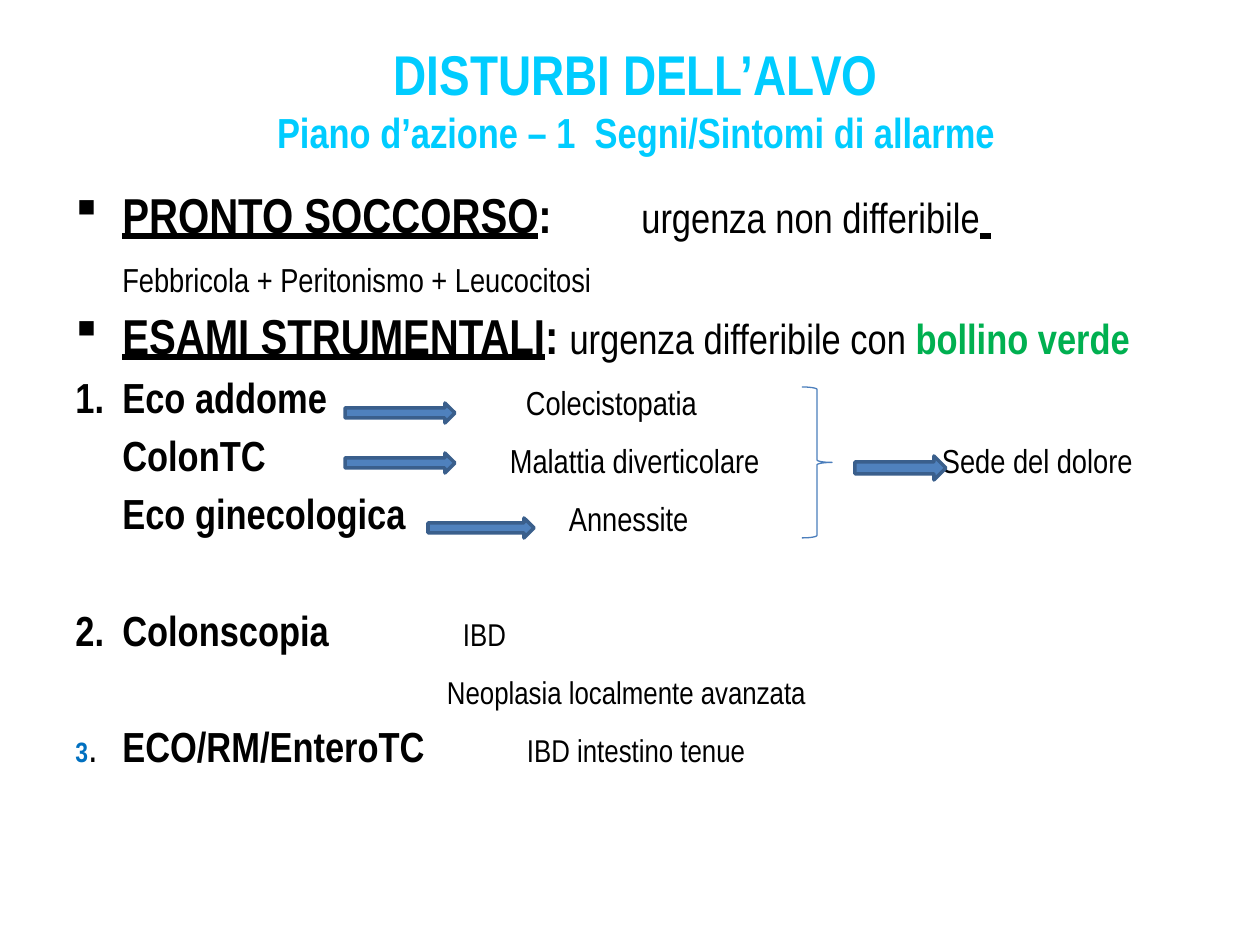
from lxml.etree import SubElement as Sub
from pptx import Presentation
from pptx.dml.color import RGBColor
from pptx.enum.shapes import MSO_SHAPE as Shape
from pptx.enum.text import MSO_ANCHOR as Anchor, PP_ALIGN as Align
from pptx.oxml.ns import qn
from pptx.util import Emu, Pt

SCALE = 914400 / 126
FACE = "Arial Narrow"
BLACK, CYAN, GREEN, BLUE = "000000", "00CCFF", "00B050", "0070C0"
FILL, EDGE, BRACE = "4F81BD", "3A5F8C", "4B7EBC"
INDENT, PITCH, LIST_TOP = 47, 58, 382
NOTES = [
    ("Colecistopatia", 526, 0, 19),
    ("Malattia diverticolare", 510, 1, 19),
    ("Sede del dolore", 942, 1, 19),
    ("Annessite", 569, 2, 19),
    ("IBD", 463, 4, 18),
    ("Neoplasia localmente avanzata", 447, 5, 18),
    ("IBD intestino tenue", 527, 6, 18),
]
ARROWS = [
    (345, 403, 110, 20),
    (345, 453, 110, 20),
    (855, 456, 91, 24),
    (428, 518, 106, 20),
]


def px(n):
    return Emu(round(n * SCALE))


def color(code):
    return RGBColor.from_string(code)


def add_box(slide, left, top, width, height, anchor):
    box = slide.shapes.add_textbox(px(left), px(top), px(width), px(height))
    frame = box.text_frame
    frame.word_wrap = True
    frame.vertical_anchor = anchor
    return frame


def add_run(para, text, size, style="", tint=BLACK):
    run = para.add_run()
    run.text = text
    run.font.size = Pt(size)
    run.font.bold = "b" in style
    run.font.underline = "u" in style
    run.font.color.rgb = color(tint)


def add_mark(props, mark):
    if isinstance(mark, int):
        Sub(props, qn("a:buAutoNum"), type="arabicPeriod", startAt=str(mark))
    elif mark:
        Sub(props, qn("a:buFont"), typeface="Wingdings")
        Sub(props, qn("a:buChar"), char=mark)
    else:
        Sub(props, qn("a:buNone"))


def add_tab(props, stop):
    tabs = Sub(props, qn("a:tabLst"))
    Sub(tabs, qn("a:tab"), pos=str(px(stop)), algn="l")


def add_row(frame, pitch, runs, mark=None, stop=None, hang=False, gap=0):
    first = frame.paragraphs[0]
    para = frame.add_paragraph() if first.runs else first
    para.line_spacing = px(pitch)
    para.space_before = px(gap)
    props = para._p.get_or_add_pPr()
    props.set("marL", str(px(INDENT)))
    props.set("indent", str(px(-INDENT if mark or hang else 0)))
    add_mark(props, mark)
    if stop:
        add_tab(props, stop)
    para.font.name = FACE
    for run in runs:
        add_run(para, *run)


def add_title(slide):
    frame = add_box(slide, 69, 1, 1134, 195, Anchor.MIDDLE)
    para = frame.paragraphs[0]
    para.alignment = Align.CENTER
    para.font.name = FACE
    add_run(para, "DISTURBI DELL’ALVO", 32, "b", CYAN)
    para.add_line_break()
    add_run(para, "Piano d’azione – 1  Segni/Sintomi di allarme", 24, "b", CYAN)


def add_plan(slide):
    frame = add_box(slide, 63, 185, 1134, 665, Anchor.TOP)
    add_row(frame, 52, [
        ("PRONTO SOCCORSO", 28, "bu"), (":\t", 28, "b"),
        ("urgenza non differibile", 24), (" ", 28, "bu"),
    ], "§", 566)
    add_row(frame, 56, [("Febbricola + Peritonismo + Leucocitosi", 19)])
    add_row(frame, 65, [
        ("ESAMI STRUMENTALI", 28, "bu"), (": ", 28, "b"),
        ("urgenza differibile con ", 24), ("bollino verde", 24, "b", GREEN),
    ], "§")
    add_row(frame, PITCH, [("Eco addome", 24, "b")], 1)
    add_row(frame, PITCH, [("ColonTC", 24, "b")])
    add_row(frame, PITCH, [("Eco ginecologica", 24, "b")])
    add_row(frame, PITCH, [("Colonscopia", 24, "b")], 2, gap=PITCH + 1)
    add_row(frame, PITCH, [
        ("3", 16, "b", BLUE), (".\t", 24), ("ECO/RM/EnteroTC", 24, "b"),
    ], hang=True, gap=PITCH)


def add_note(slide, text, left, row, size):
    frame = add_box(slide, left, LIST_TOP + row * PITCH, 380, 40, Anchor.MIDDLE)
    frame.word_wrap = False
    frame.margin_left = frame.margin_right = 0
    frame.margin_top = frame.margin_bottom = 0
    para = frame.paragraphs[0]
    para.font.name = FACE
    add_run(para, text, size)


def add_sign(slide, kind, place, edge, width, fill=None):
    sign = slide.shapes.add_shape(kind, *map(px, place))
    sign.shadow.inherit = False
    if fill:
        sign.fill.solid()
        sign.fill.fore_color.rgb = color(fill)
    else:
        sign.fill.background()
    sign.line.color.rgb = color(edge)
    sign.line.width = Pt(width)


def main():
    deck = Presentation()
    deck.slide_width, deck.slide_height = px(1260), px(945)
    slide = deck.slides.add_slide(deck.slide_layouts[6])
    add_plan(slide)
    for note in NOTES:
        add_note(slide, *note)
    add_title(slide)
    for place in ARROWS:
        add_sign(slide, Shape.RIGHT_ARROW, place, EDGE, 2, FILL)
    add_sign(slide, Shape.RIGHT_BRACE, (802, 387, 30, 151), BRACE, 0.75)
    deck.save("out.pptx")


if __name__ == "__main__":
    main()
